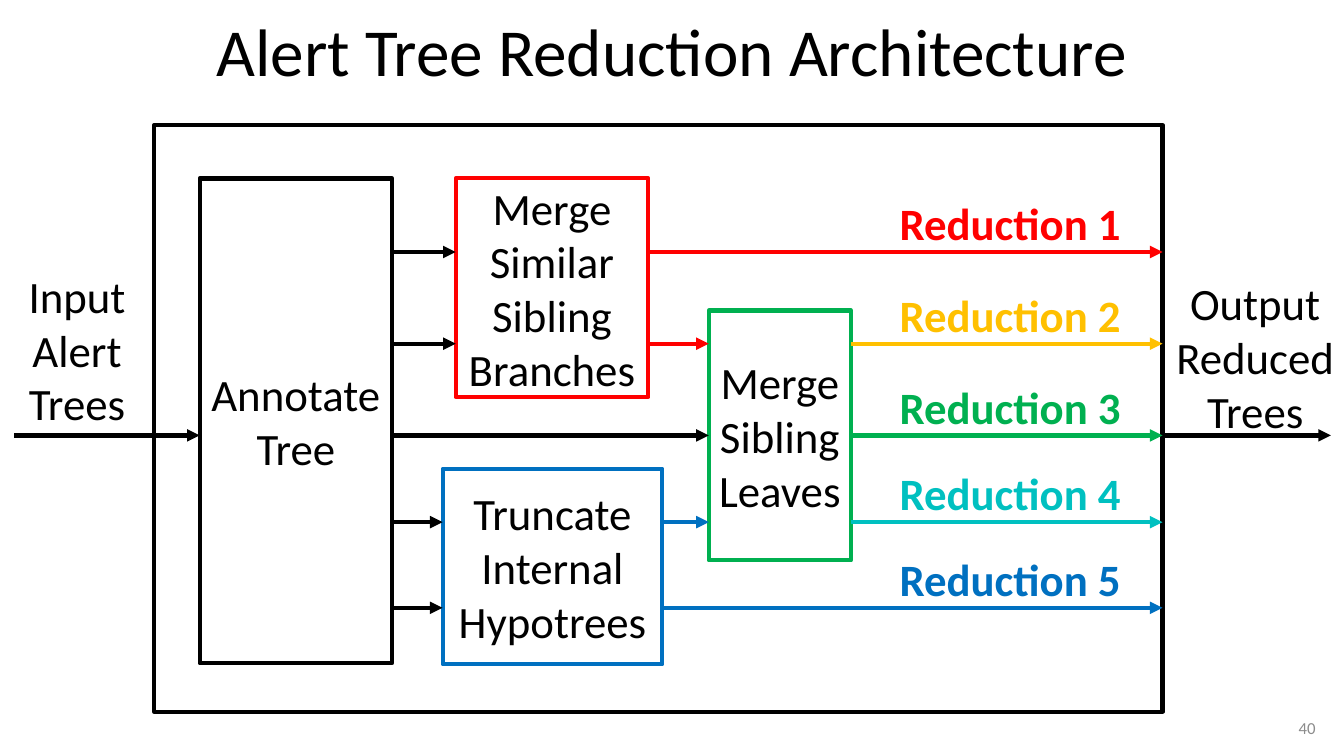
import pptx
import pptx.util
import pptx.dml.color
import pptx.enum.shapes
import pptx.enum.text
import pptx.oxml.ns
from lxml import etree

RGBColor = pptx.dml.color.RGBColor
BLACK = RGBColor(0x00, 0x00, 0x00)
RED = RGBColor(0xFF, 0x00, 0x00)
AMBER = RGBColor(0xFF, 0xC0, 0x00)
GREEN = RGBColor(0x00, 0xB0, 0x50)
TEAL = RGBColor(0x00, 0xC0, 0xC0)
BLUE = RGBColor(0x00, 0x70, 0xC0)
GREY = RGBColor(0x8C, 0x8C, 0x8C)

FONT = "Calibri"
CENTER = pptx.enum.text.PP_ALIGN.CENTER
RIGHT = pptx.enum.text.PP_ALIGN.RIGHT

SLIDE_WIDTH, SLIDE_HEIGHT = 13.33, 7.5
ROWS = [2.5, 3.41, 4.32, 5.18, 6.03]
INPUT_START, OUTPUT_END = 0.14, 13.2
LABEL_LEFT, LABEL_WIDTH, LABEL_HEIGHT = 8.82, 2.4, 0.54
LABEL_RISE = 0.56

BOXES = {
    "frame": (1.53, 1.24, 10, 5.82, BLACK, []),
    "branches": (4.52, 1.77, 1.91, 2.17, RED, ["Merge Similar Sibling Branches"]),
    "hypotrees": (4.39, 4.65, 2.18, 1.94, BLUE, ["Truncate", "Internal Hypotrees"]),
    "leaves": (7.03, 3.08, 1.41, 2.48, GREEN, ["Merge Sibling Leaves"]),
    "annotate": (1.98, 1.77, 1.91, 4.81, BLACK, ["Annotate Tree"]),
}

ARROWS = [
    ("input", "annotate", 2, BLACK),
    ("annotate", "branches", 0, BLACK),
    ("annotate", "branches", 1, BLACK),
    ("annotate", "leaves", 2, BLACK),
    ("annotate", "hypotrees", 3, BLACK),
    ("annotate", "hypotrees", 4, BLACK),
    ("branches", "leaves", 1, RED),
    ("hypotrees", "leaves", 3, BLUE),
    ("branches", "frame", 0, RED),
    ("leaves", "frame", 1, AMBER),
    ("leaves", "frame", 2, GREEN),
    ("leaves", "frame", 3, TEAL),
    ("hypotrees", "frame", 4, BLUE),
    ("frame", "output", 2, BLACK),
]

REDUCTIONS = [
    ("Reduction 1", RED),
    ("Reduction 2", AMBER),
    ("Reduction 3", GREEN),
    ("Reduction 4", TEAL),
    ("Reduction 5", BLUE),
]

TEXTS = [
    (["Alert Tree Reduction Architecture"], (1.24, 0.04, 10.85, 0.91), 48, BLACK, CENTER),
    (["Input", "Alert Trees"], (0, 2.63, 1.53, 1.67), 32, BLACK, CENTER),
    (["Output Reduced Trees"], (11.5, 2.79, 1.9, 1.5), 32, BLACK, CENTER),
    (["40"], (10.15, 7.02, 2.9, 0.4), 12, GREY, RIGHT),
]


def inches(*values):
    return [pptx.util.Inches(value) for value in values]


def write(shape, lines, size=32, color=BLACK, align=CENTER, bold=False):
    frame = shape.text_frame
    frame.word_wrap = True
    frame.vertical_anchor = pptx.enum.text.MSO_ANCHOR.MIDDLE
    frame.margin_left = frame.margin_right = 0
    frame.margin_top = frame.margin_bottom = 0
    for index, line in enumerate(lines):
        paragraph = frame.add_paragraph() if index else frame.paragraphs[0]
        paragraph.alignment = align
        run = paragraph.add_run()
        run.text = line
        run.font.name = FONT
        run.font.size = pptx.util.Pt(size)
        run.font.bold = bold
        run.font.color.rgb = color


def add_box(slide, left, top, width, height, color, lines):
    shape = slide.shapes.add_shape(
        pptx.enum.shapes.MSO_SHAPE.RECTANGLE, *inches(left, top, width, height)
    )
    shape.shadow.inherit = False
    shape.fill.background()
    shape.line.color.rgb = color
    shape.line.width = pptx.util.Pt(3)
    write(shape, lines)
    return shape


def add_arrow(slide, start, end, row, color):
    connector = slide.shapes.add_connector(
        pptx.enum.shapes.MSO_CONNECTOR.STRAIGHT, *inches(start, row, end, row)
    )
    connector.line.color.rgb = color
    connector.line.width = pptx.util.Pt(3)
    qn = pptx.oxml.ns.qn
    properties = connector.element.find(qn("p:spPr"))
    etree.SubElement(properties.find(qn("a:ln")), qn("a:tailEnd"), type="triangle")
    etree.SubElement(properties, qn("a:effectLst"))
    return connector


def right_edge(name):
    left, top, width, *rest = BOXES[name]
    return left + width


def main():
    presentation = pptx.Presentation()
    presentation.slide_width, presentation.slide_height = inches(SLIDE_WIDTH, SLIDE_HEIGHT)
    slide = presentation.slides.add_slide(presentation.slide_layouts[6])

    shapes = {name: add_box(slide, *box) for name, box in BOXES.items()}

    for source, target, row, color in ARROWS:
        start = INPUT_START if source == "input" else right_edge(source)
        if target == "output":
            end = OUTPUT_END
        else:
            end = right_edge(target) if target == "frame" else BOXES[target][0]
        connector = add_arrow(slide, start, end, ROWS[row], color)
        if row == 2 and source == "leaves":
            connector.begin_connect(shapes[source], 3)
        if row == 2 and target == "leaves":
            connector.end_connect(shapes[target], 1)

    for (label, color), row in zip(REDUCTIONS, ROWS):
        box = slide.shapes.add_textbox(
            *inches(LABEL_LEFT, row - LABEL_RISE, LABEL_WIDTH, LABEL_HEIGHT)
        )
        write(box, [label], color=color, bold=True)

    for lines, place, size, color, align in TEXTS:
        box = slide.shapes.add_textbox(*inches(*place))
        write(box, lines, size, color, align)

    presentation.save("out.pptx")


if __name__ == "__main__":
    main()
